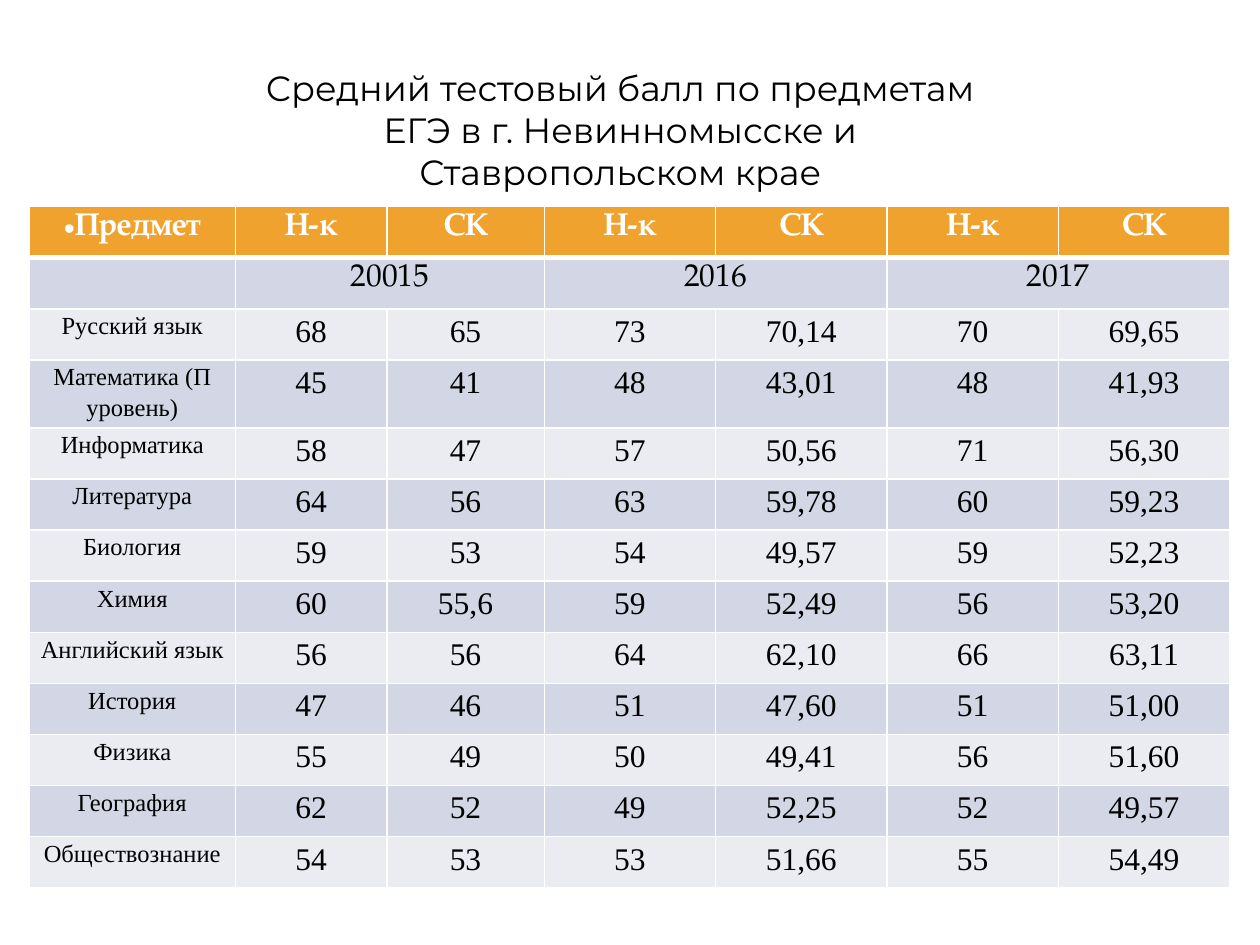
from lxml.etree import SubElement
from pptx import Presentation
from pptx.dml.color import RGBColor
from pptx.enum.text import MSO_ANCHOR, PP_ALIGN
from pptx.oxml.ns import qn
from pptx.util import Inches, Pt

TITLE = "Средний тестовый балл по предметам \vЕГЭ в г. Невинномысске и \vСтавропольском крае "
HEADINGS = ["Предмет"] + ["Н-к", "СК"] * 3
YEARS = ["20015", "2016", "2017"]
SCORES = [
    ("Русский язык", "68", "65", "73", "70,14", "70", "69,65"),
    ("Математика (П уровень)", "45", "41", "48", "43,01", "48", "41,93"),
    ("Информатика", "58", "47", "57", "50,56", "71", "56,30"),
    ("Литература", "64", "56", "63", "59,78", "60", "59,23"),
    ("Биология", "59", "53", "54", "49,57", "59", "52,23"),
    ("Химия", "60", "55,6", "59", "52,49", "56", "53,20"),
    ("Английский язык", "56", "56", "64", "62,10", "66", "63,11"),
    ("История", "47", "46", "51", "47,60", "51", "51,00"),
    ("Физика", "55", "49", "50", "49,41", "56", "51,60"),
    ("География", "62", "52", "49", "52,25", "52", "49,57"),
    ("Обществознание", "54", "53", "53", "51,66", "55", "54,49"),
]
COLORS = {"header": "F0A22E", "dark_band": "D2D6E5", "light_band": "EAECF2",
          "border": "FFFFFF", "header_text": "FFFFFF", "text": "000000"}
TITLE_FONT = {"name": "Montserrat", "size": Pt(20), "bold": False}
HEADER_FONT = {"name": "TeX Gyre Pagella", "size": Pt(18), "bold": True}
YEAR_FONT = HEADER_FONT | {"bold": False}
SCORE_FONT = {"name": "Times New Roman", "size": Pt(18), "bold": False}
SUBJECT_FONT = SCORE_FONT | {"size": Pt(14)}
SCORE_MARGINS = {"margin_left": Inches(0.07), "margin_right": Inches(0.07),
                 "margin_top": 0, "margin_bottom": 0}
COLUMN_WIDTHS = [1.64, 1.2, 1.25] + [1.36] * 4
TABLE_HEIGHT, TALL_ROW_HEIGHT, TALL_ROW = 5.41, 0.54, 3


def apply(target, values):
    for key, value in values.items():
        setattr(target, key, value)


def format_text(frame, font, color):
    for paragraph in frame.paragraphs:
        paragraph.alignment = PP_ALIGN.CENTER
        for run in paragraph.runs:
            apply(run.font, font)
            run.font.color.rgb = RGBColor.from_string(COLORS[color])


def add_borders(cell, top, bottom):
    properties = cell._tc.get_or_add_tcPr()
    for side, width in {"L": 1, "R": 1, "T": top, "B": bottom}.items():
        line = SubElement(properties, qn(f"a:ln{side}"), w=str(Pt(width)))
        SubElement(SubElement(line, qn("a:solidFill")), qn("a:srgbClr"), val=COLORS["border"])


def add_bullet(paragraph):
    properties = paragraph._p.get_or_add_pPr()
    apply_indent = {"marL": "0", "indent": "0"}
    for key, value in apply_indent.items():
        properties.set(key, value)
    SubElement(properties, qn("a:buFont"), typeface="Arial")
    SubElement(properties, qn("a:buChar"), char="•")


presentation = Presentation()
presentation.slide_width, presentation.slide_height = Inches(10), Inches(7.5)
slide = presentation.slides.add_slide(presentation.slide_layouts[5])

title = slide.shapes.title
apply(title, {"left": Inches(0.31), "top": Inches(0.47),
              "width": Inches(9.3), "height": Inches(1.11)})
title.text_frame.text = TITLE
title.text_frame.vertical_anchor = MSO_ANCHOR.MIDDLE
format_text(title.text_frame, TITLE_FONT, "text")

year_row = [""] + [text for year in YEARS for text in (year, "")]
rows = [HEADINGS, year_row, *SCORES]
scores = slide.shapes.add_table(
    len(rows), len(HEADINGS), Inches(0.23), Inches(1.64),
    Inches(sum(COLUMN_WIDTHS)), Inches(TABLE_HEIGHT)).table
for column, width in zip(scores.columns, COLUMN_WIDTHS):
    column.width = Inches(width)
row_height = (TABLE_HEIGHT - TALL_ROW_HEIGHT) / (len(rows) - 1)
for r, row in enumerate(scores.rows):
    row.height = Inches(TALL_ROW_HEIGHT if r == TALL_ROW else row_height)

for r, texts in enumerate(rows):
    band = "header" if r == 0 else "dark_band" if r % 2 else "light_band"
    for c, text in enumerate(texts):
        cell = scores.cell(r, c)
        cell.text = text
        add_borders(cell, top=3 if r == 1 else 1, bottom=3 if r == 0 else 1)
        cell.fill.solid()
        cell.fill.fore_color.rgb = RGBColor.from_string(COLORS[band])
        if r > 1:
            apply(cell, SCORE_MARGINS)
            cell.text_frame.paragraphs[0].line_spacing = 1.15
            font = SCORE_FONT if c else SUBJECT_FONT
        else:
            font = YEAR_FONT if r else HEADER_FONT
        format_text(cell.text_frame, font, "text" if r else "header_text")

add_bullet(scores.cell(0, 0).text_frame.paragraphs[0])
for c in range(1, len(HEADINGS), 2):
    scores.cell(1, c).merge(scores.cell(1, c + 1))

presentation.save("out.pptx")
